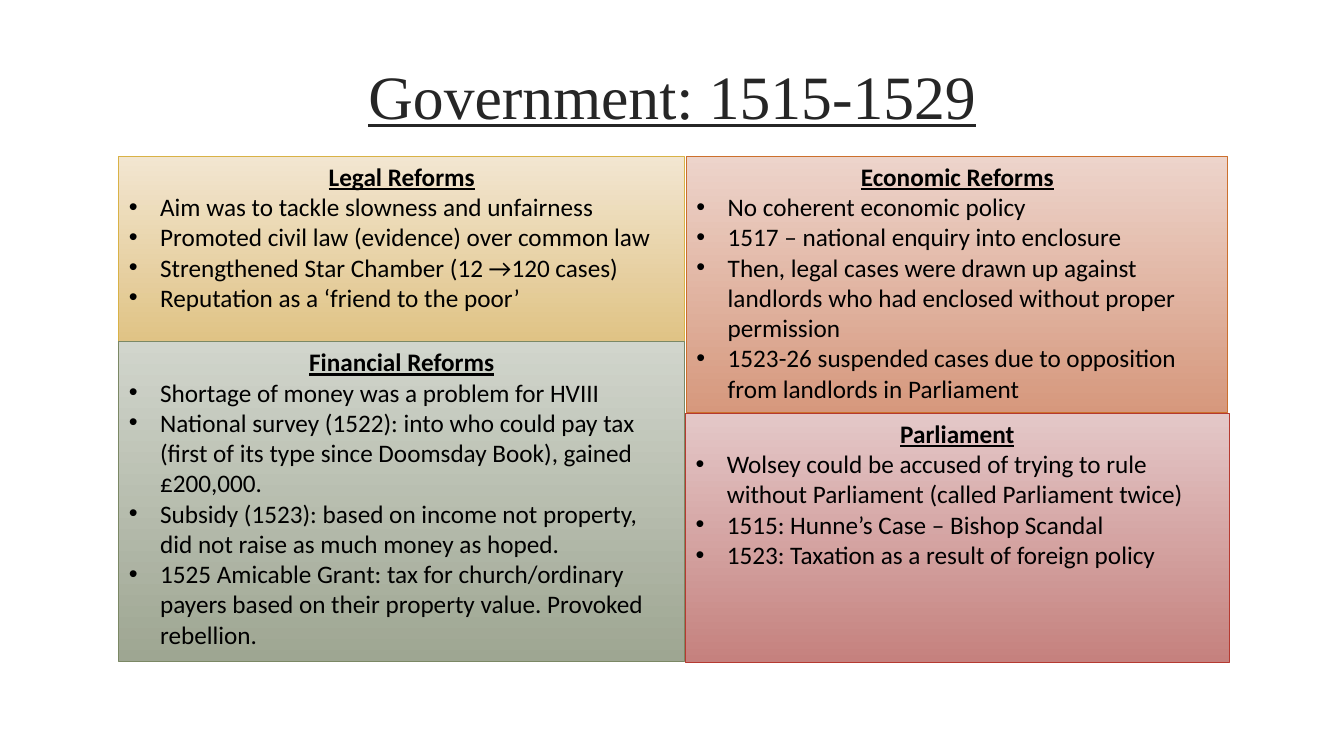
from dataclasses import dataclass

from lxml import etree
from pptx import Presentation
from pptx.dml.color import RGBColor
from pptx.enum import shapes, text
from pptx.oxml.ns import qn
from pptx.util import Emu, Pt

PX = 9144  # EMU per px, 100 px to the inch
BULLET_INDENT = 31


@dataclass(frozen=True)
class Box:
    left: int
    top: int
    width: int
    height: int

    def emu(self) -> list[Emu]:
        return [Emu(v * PX) for v in (self.left, self.top, self.width, self.height)]


@dataclass(frozen=True)
class Panel:
    box: Box
    top_colour: str
    bottom_colour: str
    border: str
    heading: str
    points: tuple[str, ...]


TITLE_BOX = Box(142, 52, 1050, 143)
PANELS = (
    Panel(Box(118, 155, 561, 184), "F2E6D1", "E0C385", "D9B247", "Legal Reforms", (
        "Aim was to tackle slowness and unfairness",
        "Promoted civil law (evidence) over common law",
        "Strengthened Star Chamber (12 →120 cases)",
        "Reputation as a ‘friend to the poor’",
    )),
    Panel(Box(118, 339, 561, 317), "D1D5CC", "9EA692", "7B8865", "Financial Reforms", (
        "Shortage of money was a problem for HVIII",
        "National survey (1522): into who could pay tax (first of its type since "
        "Doomsday Book), gained £200,000.",
        "Subsidy (1523): based on income not property, did not raise as much money as hoped.",
        "1525 Amicable Grant: tax for church/ordinary payers based on their property "
        "value. Provoked rebellion.",
    )),
    Panel(Box(680, 410, 539, 247), "E4C8C8", "C5817E", "B53A31", "Parliament", (
        "Wolsey could be accused of trying to rule without Parliament "
        "(called Parliament twice)",
        "1515: Hunne’s Case – Bishop Scandal",
        "1523: Taxation as a result of foreign policy",
    )),
    Panel(Box(681, 155, 537, 254), "EDD4CB", "D6987D", "CC702D", "Economic Reforms", (
        "No coherent economic policy",
        "1517 – national enquiry into enclosure",
        "Then, legal cases were drawn up against landlords who had enclosed without "
        "proper permission",
        "1523-26 suspended cases due to opposition from landlords in Parliament",
    )),
)


def rgb(colour: str) -> RGBColor:
    return RGBColor.from_string(colour)


def add_run(paragraph, words: str, size: int, font_name: str, colour: str,
            bold: bool = False, underline: bool = False) -> None:
    run = paragraph.add_run()
    run.text = words
    font = run.font
    font.size, font.name = Pt(size), font_name
    font.bold, font.underline = bold, underline
    font.color.rgb = rgb(colour)


def add_bullet(paragraph) -> None:
    properties = paragraph._p.get_or_add_pPr()
    properties.set("marL", str(BULLET_INDENT * PX))
    properties.set("indent", str(-BULLET_INDENT * PX))
    etree.SubElement(properties, qn("a:buFont"), typeface="Arial")
    etree.SubElement(properties, qn("a:buChar"), char="•")


def add_title(slide) -> None:
    title = slide.shapes.title
    title.left, title.top, title.width, title.height = TITLE_BOX.emu()
    frame = title.text_frame
    frame.auto_size = text.MSO_AUTO_SIZE.NONE
    frame.vertical_anchor = text.MSO_ANCHOR.TOP
    paragraph = frame.paragraphs[0]
    paragraph.alignment = text.PP_ALIGN.CENTER
    add_run(paragraph, "Government: 1515-1529", 44, "Times New Roman", "262626",
            underline=True)


def add_panel(slide, panel: Panel) -> None:
    shape = slide.shapes.add_shape(shapes.MSO_SHAPE.RECTANGLE, *panel.box.emu())
    shape.shadow.inherit = False
    shape.fill.gradient()
    shape.fill.gradient_angle = 270
    stops = shape.fill.gradient_stops
    for stop, position, colour in zip(stops, (0, 1), (panel.top_colour, panel.bottom_colour)):
        stop.position = position
        stop.color.rgb = rgb(colour)
    shape.line.color.rgb = rgb(panel.border)
    shape.line.width = Pt(0.75)

    frame = shape.text_frame
    frame.word_wrap = True
    frame.vertical_anchor = text.MSO_ANCHOR.TOP
    heading = frame.paragraphs[0]
    heading.alignment = text.PP_ALIGN.CENTER
    add_run(heading, panel.heading, 18, "Calibri", "000000", bold=True, underline=True)
    for point in panel.points:
        paragraph = frame.add_paragraph()
        paragraph.alignment = text.PP_ALIGN.LEFT
        add_bullet(paragraph)
        add_run(paragraph, point, 18, "Calibri", "000000")


def main() -> None:
    presentation = Presentation()
    presentation.slide_width = Emu(1333 * PX)
    presentation.slide_height = Emu(750 * PX)
    title_only = presentation.slide_layouts.get_by_name("Title Only")
    slide = presentation.slides.add_slide(title_only)
    add_title(slide)
    for panel in PANELS:
        add_panel(slide, panel)
    presentation.save("out.pptx")


if __name__ == "__main__":
    main()
